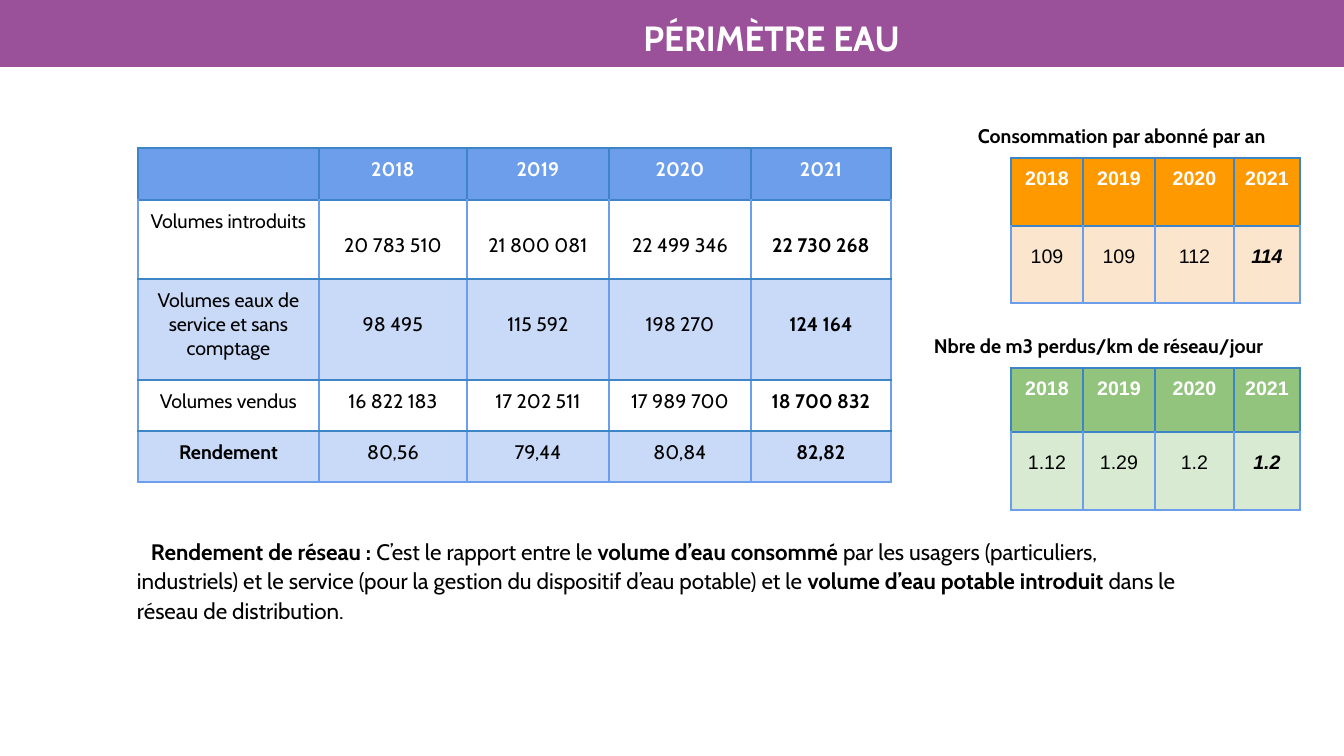
import dataclasses

import lxml.etree
import pptx
import pptx.dml.color
import pptx.enum.shapes
import pptx.enum.text
import pptx.oxml.ns
import pptx.util

SCALE = 914400 / 100.8
ALIGN = pptx.enum.text.PP_ALIGN
ANCHOR = pptx.enum.text.MSO_ANCHOR


@dataclasses.dataclass(frozen=True)
class Theme:
    heading_font: str = "Cabin"
    number_font: str = "Arial"
    title_size: int = 25
    body_size: int = 16
    small_size: int = 14
    border_width: float = 1.5
    inset: int = 10
    purple: str = "9B509A"
    white: str = "FFFFFF"
    black: str = "000000"
    border: str = "3D85C6"
    blue: str = "6D9EEB"
    pale_blue: str = "C9DAF8"
    orange: str = "FF9900"
    pale_orange: str = "FCE5CD"
    green: str = "93C47D"
    pale_green: str = "D9EAD3"


def px(length):
    return pptx.util.Emu(round(length * SCALE))


def rgb(value):
    return pptx.dml.color.RGBColor.from_string(value)


class Page:
    """Draws the elements of one slide in one theme."""

    def __init__(self, deck, theme):
        self.theme = theme
        self.slide = deck.slides.add_slide(deck.slide_layouts[5])
        self.shapes = self.slide.shapes

    def style(self, font, size, color, bold=False, italic=False, name=None):
        font.name = name or self.theme.heading_font
        font.size = pptx.util.Pt(size)
        font.color.rgb = rgb(color)
        font.bold = bold
        font.italic = italic

    def banner(self, text, height, title_left, width):
        bar = self.shapes.add_shape(
            pptx.enum.shapes.MSO_SHAPE.RECTANGLE, 0, 0, px(width), px(height))
        bar.shadow.inherit = False
        bar.fill.solid()
        bar.fill.fore_color.rgb = rgb(self.theme.purple)
        bar.line.fill.background()
        title = self.shapes.title
        title._element.addprevious(bar._element)
        title.left, title.top = px(title_left), 0
        title.width, title.height = px(width - title_left), px(height)
        frame = title.text_frame
        frame.text = text
        frame.auto_size = pptx.enum.text.MSO_AUTO_SIZE.NONE
        frame.vertical_anchor = ANCHOR.MIDDLE
        para = frame.paragraphs[0]
        para.alignment = ALIGN.CENTER
        para.line_spacing = 1.2
        self.style(para.runs[0].font, self.theme.title_size, self.theme.white, True)

    def text(self, left, top, width, height, spans, size, line_spacing=1.0, indent=0):
        """Adds one paragraph made of (text, bold) spans."""
        box = self.shapes.add_textbox(px(left), px(top), px(width), px(height))
        frame = box.text_frame
        frame.word_wrap = True
        self.set_insets(frame, self.theme.inset)
        para = frame.paragraphs[0]
        para.line_spacing = line_spacing
        if indent:
            para._p.get_or_add_pPr().set("indent", str(px(indent)))
        for words, bold in spans:
            span = para.add_run()
            span.text = words
            self.style(span.font, size, self.theme.black, bold)

    def set_insets(self, target, top):
        """Sets the margins of a text frame or a cell."""
        target.margin_left = target.margin_right = px(self.theme.inset)
        target.margin_bottom = px(self.theme.inset)
        target.margin_top = px(top)

    def borders(self, cell, sides, bottom):
        properties = cell._tc.get_or_add_tcPr()
        colors = {"lnL": sides, "lnR": sides, "lnT": self.theme.border, "lnB": bottom}
        for tag, color in colors.items():
            line = lxml.etree.SubElement(properties, pptx.oxml.ns.qn(f"a:{tag}"))
            line.set("w", str(pptx.util.Pt(self.theme.border_width)))
            fill = lxml.etree.SubElement(line, pptx.oxml.ns.qn("a:solidFill"))
            lxml.etree.SubElement(fill, pptx.oxml.ns.qn("a:srgbClr")).set("val", color)

    def table(self, left, top, columns, heights, rows, fills, font, drops,
              bold_rows=(), label_column=False, italic_last=False):
        """Adds a table; drops give the extra space above the numbers of each row."""
        theme = self.theme
        table = self.shapes.add_table(
            len(rows), len(columns), px(left), px(top),
            px(sum(columns)), px(sum(heights))).table
        table.first_row = table.horz_banding = False
        for column, width in zip(table.columns, columns):
            column.width = px(width)
        for row, height in zip(table.rows, heights):
            row.height = px(height)
        for r, values in enumerate(rows):
            header, last_row = r == 0, r == len(rows) - 1
            for c, value in enumerate(values):
                cell = table.cell(r, c)
                last_column = c == len(columns) - 1
                label = label_column and c == 0
                cell.text = value
                self.set_insets(cell, theme.inset + (0 if label else drops[r]))
                self.borders(cell, theme.border if header else theme.blue,
                             theme.blue if last_row else theme.border)
                cell.fill.solid()
                cell.fill.fore_color.rgb = rgb(fills[r])
                para = cell.text_frame.paragraphs[0]
                para.alignment = ALIGN.CENTER
                bold = header or last_column or (label and r in bold_rows)
                for span in para.runs:
                    self.style(span.font, theme.small_size,
                               theme.white if header else theme.black, bold,
                               italic_last and last_column and not header, font)


def main():
    theme = Theme()
    deck = pptx.Presentation()
    deck.slide_width, deck.slide_height = px(1344), px(756)
    page = Page(deck, theme)
    years = ["2018", "2019", "2020", "2021"]

    page.banner("PÉRIMÈTRE EAU", 67, 199, 1344)

    page.table(
        138, 148, [181, 148, 142, 142, 140], [52, 79, 101, 51, 51],
        [["", *years],
         ["Volumes introduits", "20 783 510", "21 800 081", "22 499 346", "22 730 268"],
         ["Volumes eaux de service et sans comptage",
          "98 495", "115 592", "198 270", "124 164"],
         ["Volumes vendus", "16 822 183", "17 202 511", "17 989 700", "18 700 832"],
         ["Rendement", "80,56", "79,44", "80,84", "82,82"]],
        [theme.blue, theme.white, theme.pale_blue, theme.white, theme.pale_blue],
        theme.heading_font, [0, 24, 24, 0, 0], bold_rows=[4], label_column=True)

    indicators = [
        ("Consommation par abonné par an", (968, 114, 332), 158, [68, 77],
         ["109", "109", "112", "114"], [theme.orange, theme.pale_orange]),
        ("Nbre de m3 perdus/km de réseau/jour", (924, 324, 384), 368, [64, 78],
         ["1.12", "1.29", "1.2", "1.2"], [theme.green, theme.pale_green]),
    ]
    for caption, (left, top, width), table_top, heights, values, fills in indicators:
        page.text(left, top, width, 44, [(caption, True)], theme.small_size)
        page.table(1011, table_top, [72, 72, 79, 66], heights, [years, values],
                   fills, theme.number_font, [0, 10], italic_last=True)

    page.text(
        127, 525, 1074, 111,
        [("Rendement de réseau : ", True),
         ("C’est le rapport entre le ", False),
         ("volume d’eau consommé ", True),
         ("par les usagers (particuliers, industriels) et le service (pour la gestion "
          "du dispositif d’eau potable) et le ", False),
         ("volume d’eau potable introduit ", True),
         ("dans le réseau de distribution.", False)],
        theme.body_size, line_spacing=1.1, indent=14)

    deck.save("out.pptx")


if __name__ == "__main__":
    main()
